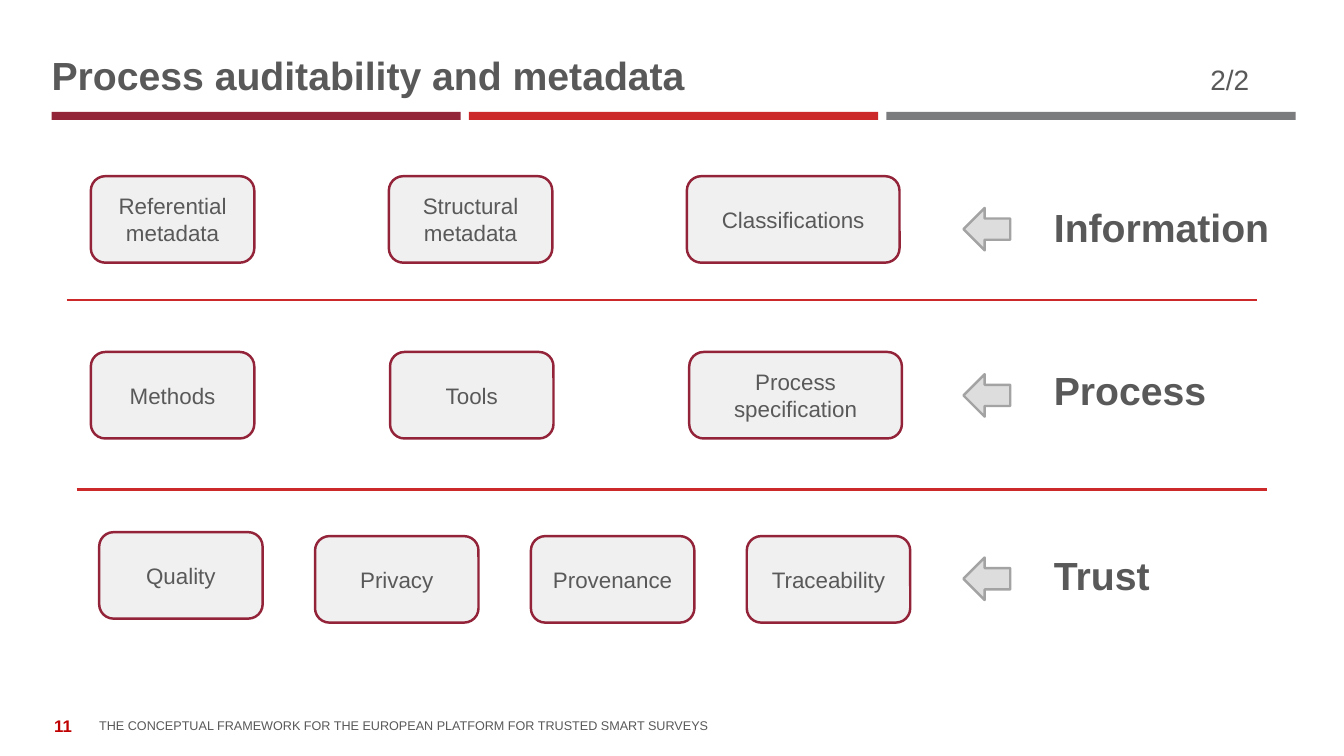
from lxml import etree
from pptx import Presentation, util as u
from pptx.dml.color import RGBColor
from pptx.enum import shapes as s, text as t
from pptx.oxml.ns import qn

# Content
TITLE, PART = "Process auditability and metadata", "2/2"
FOOTER = "THE CONCEPTUAL FRAMEWORK FOR THE EUROPEAN PLATFORM FOR TRUSTED SMART SURVEYS"
PAGE = "11"
# Lengths in cm; "drops" lowers single boxes below the top of the row
ROWS = [
    dict(label="Information", boxes=["Referential metadata", "Structural metadata", "Classifications"],
         left=2.29, top=4.44, pitch=7.51, wide_last=True, drops=[0, 0, 0],
         label_top=5.0, arrow_top=5.24),
    dict(label="Process", boxes=["Methods", "Tools", "Process specification"],
         left=2.29, top=8.87, pitch=7.54, wide_last=True, drops=[0, 0, 0],
         label_top=9.1, arrow_top=9.43),
    dict(label="Trust", boxes=["Quality", "Privacy", "Provenance", "Traceability"],
         left=2.5, top=13.41, pitch=5.44, wide_last=False, drops=[0, 0.1, 0.1, 0.1],
         label_top=13.77, arrow_top=14.05),
]
DIVIDERS = [(1.68, 7.56), (1.93, 12.34)]
DIVIDER_WIDTH = 30

THEME = dict(
    font="Arial", text="595959", page="C00000", divider="CC2A2A",
    bars=["942639", "CC2A2A", "7B7C7E"],
    box=("F0F0F0", "932338"), arrow=("DDDDDD", "A3A3A3"), line=1.75,
    title_size=28, part_size=20, label_size=28, box_size=16, page_size=12, footer_size=9,
)
BOX_WIDTH, WIDE_BOX_WIDTH, BOX_HEIGHT = 4.12, 5.36, 2.18
BAR_LEFT, BAR_WIDTH, BAR_PITCH = 1.3, 10.31, 10.52
NO_MARGINS = dict(margin_left=0, margin_right=0, margin_top=0, margin_bottom=0)

deck = Presentation()
deck.slide_width, deck.slide_height = u.Cm(33.87), u.Cm(19.05)
slide = deck.slides.add_slide(deck.slide_layouts[5])


def cm(*lengths):
    return [u.Cm(length) for length in lengths]


def apply(target, values):
    for name, value in values.items():
        setattr(target, name, value)


def style(font, size, color=THEME["text"], bold=False):
    apply(font, dict(name=THEME["font"], size=u.Pt(size), bold=bold))
    font.color.rgb = RGBColor.from_string(color)


def write(holder, words, font, frame, align=t.PP_ALIGN.LEFT):
    apply(holder.text_frame, dict(word_wrap=True, **frame))
    paragraph = holder.text_frame.paragraphs[0]
    paragraph.alignment = align
    run = paragraph.add_run()
    run.text = words
    style(run.font, **font)
    return paragraph


def draw(kind, place, fill, line=None):
    shape = slide.shapes.add_shape(kind, *cm(*place))
    shape.shadow.inherit = False
    shape.fill.solid()
    shape.fill.fore_color.rgb = RGBColor.from_string(fill)
    if line:
        shape.line.color.rgb = RGBColor.from_string(line)
        shape.line.width = u.Pt(THEME["line"])
    else:
        shape.line.fill.background()
    return shape


# Header bars
for position, color in enumerate(THEME["bars"]):
    draw(s.MSO_SHAPE.RECTANGLE, (BAR_LEFT + position * BAR_PITCH, 2.82, BAR_WIDTH, 0.2), color)

# Title, with the part number at a tab stop
title = slide.shapes.title
apply(title, dict(zip(("left", "top", "width", "height"), cm(BAR_LEFT, 1.4, 31.29, 1.07))))
heading = title.text_frame.paragraphs[0]
tabs = etree.SubElement(heading._p.get_or_add_pPr(), qn("a:tabLst"))
etree.SubElement(tabs, qn("a:tab"), pos=str(u.Cm(29.2)), algn="l")
write(title, TITLE + " \t", dict(size=THEME["title_size"], bold=True),
      dict(vertical_anchor=t.MSO_ANCHOR.BOTTOM, auto_size=t.MSO_AUTO_SIZE.NONE, **NO_MARGINS))
heading.line_spacing = u.Pt(30)
part = heading.add_run()
part.text = PART
style(part.font, THEME["part_size"])

# Footer and page number
footer = slide.shapes.add_textbox(*cm(2.5, 17.75, 26.8, 0.71))
write(footer, FOOTER, dict(size=THEME["footer_size"]),
      dict(vertical_anchor=t.MSO_ANCHOR.BOTTOM, **NO_MARGINS))
page = slide.shapes.add_textbox(*cm(0.89, 17.78, 1.4, 1.02))
write(page, PAGE, dict(size=THEME["page_size"], color=THEME["page"], bold=True),
      dict(vertical_anchor=t.MSO_ANCHOR.MIDDLE), t.PP_ALIGN.CENTER)

# Rows: boxes, arrow, label
for row in ROWS:
    last = len(row["boxes"]) - 1
    for column, (words, drop) in enumerate(zip(row["boxes"], row["drops"])):
        width = WIDE_BOX_WIDTH if row["wide_last"] and column == last else BOX_WIDTH
        box = draw(s.MSO_SHAPE.ROUNDED_RECTANGLE,
                   (row["left"] + column * row["pitch"], row["top"] + drop, width, BOX_HEIGHT),
                   *THEME["box"])
        write(box, words, dict(size=THEME["box_size"]),
              dict(vertical_anchor=t.MSO_ANCHOR.MIDDLE), t.PP_ALIGN.CENTER)
    draw(s.MSO_SHAPE.LEFT_ARROW, (24.28, row["arrow_top"], 1.18, 1.07), *THEME["arrow"])
    label = slide.shapes.add_textbox(*cm(26.31, row["label_top"], 6.35, 1.45))
    write(label, row["label"], dict(size=THEME["label_size"], bold=True), {})

# Dividers between rows
for left, top in DIVIDERS:
    divider = slide.shapes.add_connector(s.MSO_CONNECTOR.STRAIGHT,
                                         *cm(left, top, left + DIVIDER_WIDTH, top))
    divider.line.color.rgb = RGBColor.from_string(THEME["divider"])
    divider.line.width = u.Pt(THEME["line"])
    etree.SubElement(divider._element.spPr, qn("a:effectLst"))

deck.save("out.pptx")
